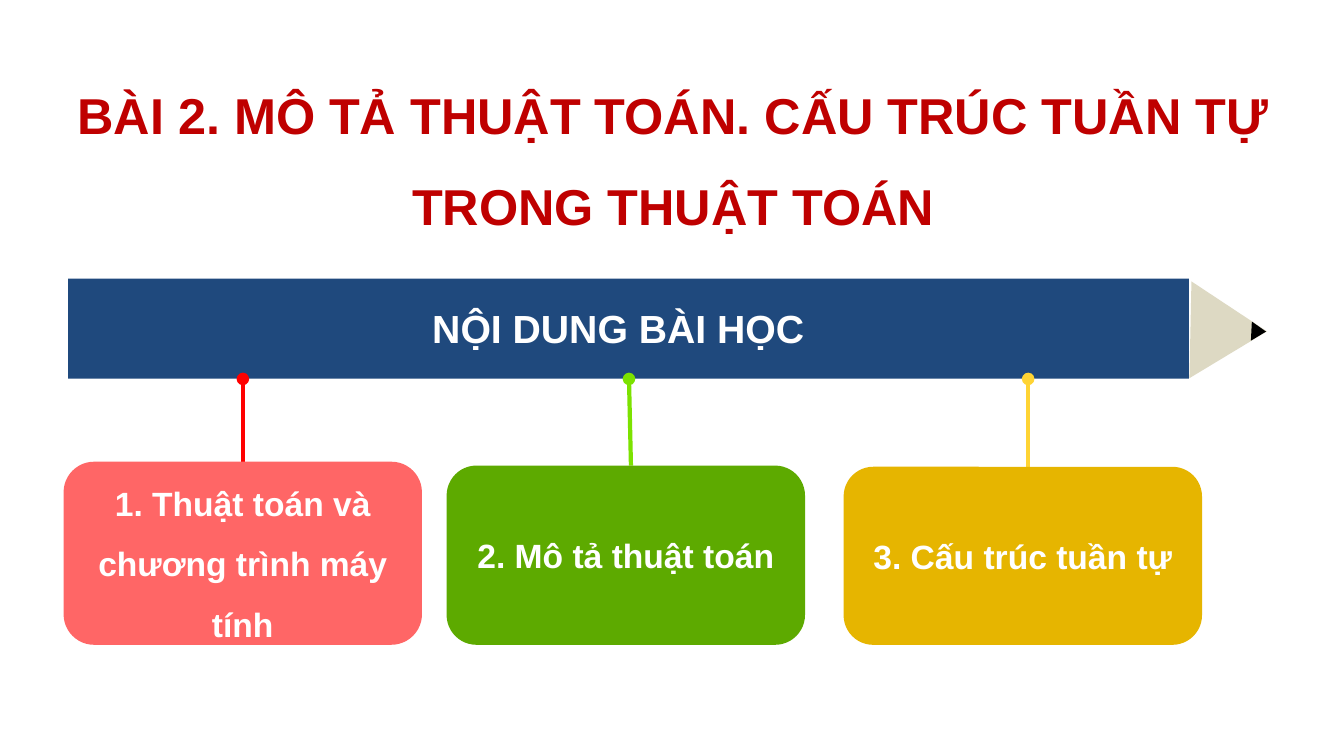
from lxml.etree import SubElement
from pptx import Presentation
from pptx.dml.color import RGBColor
from pptx.enum.shapes import MSO_CONNECTOR, MSO_SHAPE
from pptx.enum.text import MSO_ANCHOR, PP_ALIGN
from pptx.oxml.ns import qn
from pptx.util import Pt

COLORS = {
    "title": "BF0000", "body": "1F497D", "wood": "DDD9C3", "lead": "000000",
    "white": "FFFFFF",
    "red": "FF0000", "green": "7CE200", "yellow": "FFD434",
    "coral": "FF6666", "leaf": "5DAA00", "gold": "E6B500",
}


class SlideBuilder:
    font = "Arial"

    def __init__(self, slide):
        self.s = slide

    def color(self, name):
        return RGBColor.from_string(COLORS[name])

    def fill(self, sp, color):
        sp.shadow.inherit = False
        sp.fill.solid()
        sp.fill.fore_color.rgb = self.color(color)
        sp.line.fill.background()

    def label(self, sp, text, size, color="white", wrap=True, **paragraph):
        tf = sp.text_frame
        tf.word_wrap = wrap
        tf.vertical_anchor = MSO_ANCHOR.MIDDLE
        p = tf.paragraphs[0]
        for name, value in paragraph.items():
            setattr(p, name, value)
        r = p.add_run()
        r.text = text
        for name, value in {"name": self.font, "size": Pt(size), "bold": True}.items():
            setattr(r.font, name, value)
        r.font.color.rgb = self.color(color)

    def shape(self, kind, box, color, rotation=0):
        sp = self.s.shapes.add_shape(kind, *map(Pt, box))
        sp.rotation = rotation
        self.fill(sp, color)
        return sp

    def textbox(self, box, text, size, **style):
        sp = self.s.shapes.add_textbox(*map(Pt, box))
        self.label(sp, text, size, **style)

    def polygon(self, points, color):
        (x, y), *rest = points
        fb = self.s.shapes.build_freeform(Pt(x), Pt(y))
        fb.add_line_segments([(Pt(x), Pt(y)) for x, y in rest])
        self.fill(fb.convert_to_shape(), color)

    def pin(self, start, end, color):
        cn = self.s.shapes.add_connector(MSO_CONNECTOR.STRAIGHT, *map(Pt, start + end))
        cn.line.width = Pt(3)
        cn.line.color.rgb = self.color(color)
        spPr = cn._element.spPr
        SubElement(spPr.find(qn("a:ln")), qn("a:headEnd"), type="oval")
        SubElement(spPr, qn("a:effectLst"))


def main():
    prs = Presentation()
    prs.slide_width, prs.slide_height = Pt(960), Pt(540)
    b = SlideBuilder(prs.slides.add_slide(prs.slide_layouts[6]))

    # Title
    b.textbox((25.2, 74.9, 911.5, 56.9),
              "BÀI 2. MÔ TẢ THUẬT TOÁN. CẤU TRÚC TUẦN TỰ TRONG THUẬT TOÁN",
              36, color="title", alignment=PP_ALIGN.CENTER,
              line_spacing=1.5, space_before=Pt(10))

    # Pencil
    b.shape(MSO_SHAPE.ISOSCELES_TRIANGLE, (843.1, 208.8, 69.1, 54.7), "wood", 91.2)
    b.polygon([(893.5, 243.4), (894.2, 229.7), (904.3, 236.9)], "lead")
    b.shape(MSO_SHAPE.RECTANGLE, (48.6, 199.1, 800.6, 71.3), "body")

    # Pins and lesson cards
    card_width, bottom, pin_top = 256, 460.6, 270.7
    cards = [
        ("1. Thuật toán và chương trình máy tính", 45.4, 329.8, "coral",
         173.5, 173.5, "red", 1.5),
        ("2. Mô tả thuật toán", 319, 332.6, "leaf", 449.3, 450.7, "green", 1),
        ("3. Cấu trúc tuần tự", 602.6, 333.4, "gold", 734.4, 734.4, "yellow", 1),
    ]
    for text, left, top, color, pin_x, foot_x, pin_color, spacing in cards:
        b.pin((pin_x, pin_top), (foot_x, top), pin_color)
        sp = b.shape(MSO_SHAPE.ROUNDED_RECTANGLE,
                     (left, top, card_width, bottom - top), color)
        b.label(sp, text, 24, alignment=PP_ALIGN.CENTER, line_spacing=spacing)

    # Pencil label
    b.textbox((301.7, 213.8, 283, 41), "NỘI DUNG BÀI HỌC", 28, wrap=False)

    prs.save("out.pptx")


if __name__ == "__main__":
    main()
